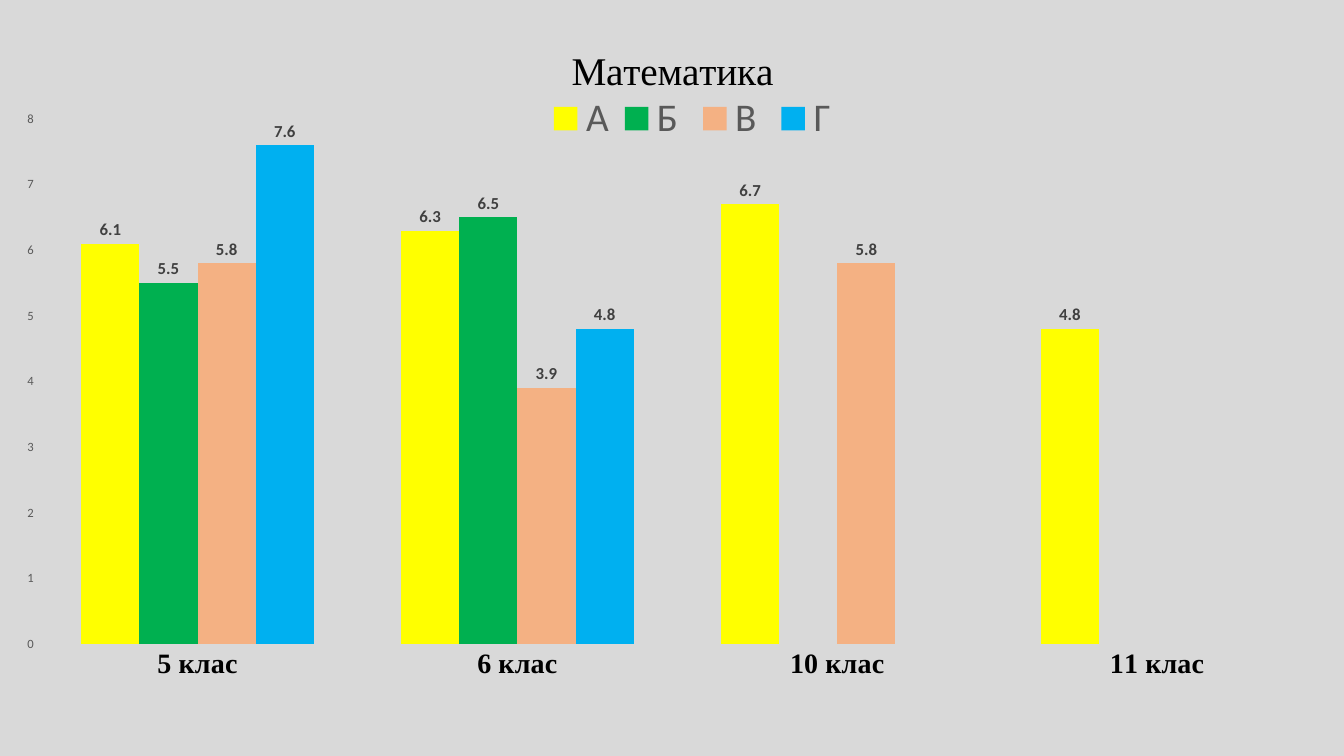
"""Build a slide with a clustered column chart of mathematics results by class."""
import lxml.etree
import pptx
import pptx.chart.data
import pptx.dml.color
import pptx.enum.chart
import pptx.oxml.ns
import pptx.util

Inches = pptx.util.Inches
qn = pptx.oxml.ns.qn
COLORS = {
    "background": "D9D9D9", "title": "000000", "axis": "595959", "label": "404040",
    "А": "FFFF00", "Б ": "00B050", "В ": "F4B183", "Г": "00B0F0",
}
CLASSES = ["5 клас", "6 клас", "10 клас", "11 клас"]
RESULTS = {
    "А": (6.1, 6.3, 6.7, 4.8),
    "Б ": (5.5, 6.5, None, None),
    "В ": (5.8, 3.9, 5.8, None),
    "Г": (7.6, 4.8, None, None),
}
FONTS = {
    "title": dict(name="Times New Roman", size=28, bold=False, color="title"),
    "category": dict(name="Times New Roman", size=20, bold=True, color="title"),
    "value": dict(name="Calibri", size=9, bold=False, color="axis"),
    "legend": dict(name="Calibri", size=28, bold=False, color="axis"),
    "label": dict(name="Calibri", size=12, bold=True, color="label"),
}


class SlideBuilder:
    """Holds the style and the current slide."""

    def __init__(self, slide, colors, fonts):
        self.slide, self.colors, self.fonts = slide, colors, fonts

    def rgb(self, name):
        """Return the named colour."""
        return pptx.dml.color.RGBColor.from_string(self.colors[name])

    def paint(self, fill, name):
        """Apply a solid named colour."""
        fill.solid()
        fill.fore_color.rgb = self.rgb(name)

    def style(self, font, name):
        """Apply the named text format."""
        for attr, value in self.fonts[name].items():
            if attr == "color":
                font.color.rgb = self.rgb(value)
            else:
                setattr(font, attr, pptx.util.Pt(value) if attr == "size" else value)

    def place(self, element, index, **values):
        """Give a chart part a manual layout in fractions of the chart."""
        for old in element.findall(qn("c:layout")):
            element.remove(old)
        layout = lxml.etree.Element(qn("c:layout"))
        manual = lxml.etree.SubElement(layout, qn("c:manualLayout"))
        modes = {"xMode": "edge", "yMode": "edge"}
        target = {"layoutTarget": values.pop("target")} if "target" in values else {}
        for tag, value in {**target, **modes, **values}.items():
            lxml.etree.SubElement(manual, qn("c:" + tag)).set("val", str(value))
        element.insert(index, layout)

    def axis(self, axis, font):
        """Format an axis with neither lines nor ticks."""
        axis.has_major_gridlines = False
        axis.major_tick_mark = pptx.enum.chart.XL_TICK_MARK.NONE
        axis.minor_tick_mark = pptx.enum.chart.XL_TICK_MARK.NONE
        axis.format.line.fill.background()
        self.style(axis.tick_labels.font, font)

    def title(self, chart, text):
        """Add the chart title."""
        chart.has_title = True
        p = chart.chart_title.text_frame.paragraphs[0]
        r = p.add_run()
        r.text = text
        self.style(r.font, "title")
        chart.chart_title.include_in_layout = False
        self.place(chart.chart_title._element, 1, x=0.42, y=0.04)

    def legend(self, chart):
        """Add the legend."""
        chart.has_legend = True
        legend = chart.legend
        legend.position = pptx.enum.chart.XL_LEGEND_POSITION.BOTTOM
        legend.include_in_layout = False
        self.style(legend.font, "legend")
        self.place(legend._element, 1, x=0.4, y=0.11, w=0.23, h=0.07)

    def column_chart(self, box, title, categories, results):
        """Add a clustered column chart."""
        data = pptx.chart.data.CategoryChartData(number_format="General")
        data.categories = categories
        for name, values in results.items():
            data.add_series(name, values)
        kind = pptx.enum.chart.XL_CHART_TYPE.COLUMN_CLUSTERED
        chart = self.slide.shapes.add_chart(kind, *map(Inches, box), data).chart
        chart.font.name = "Calibri"
        chart.font.size = pptx.util.Pt(10)
        self.title(chart, title)
        self.legend(chart)
        self.axis(chart.category_axis, "category")
        self.axis(chart.value_axis, "value")
        for attr, value in dict(minimum_scale=0, maximum_scale=8, major_unit=1).items():
            setattr(chart.value_axis, attr, value)
        plot = chart.plots[0]
        plot.gap_width, plot.overlap, plot.vary_by_categories = 150, 0, False
        for series in plot.series:
            self.paint(series.format.fill, series.name)
            series.invert_if_negative = False
            labels = series.data_labels
            labels.show_value = True
            labels.position = pptx.enum.chart.XL_LABEL_POSITION.OUTSIDE_END
            self.style(labels.font, "label")
        area = chart._chartSpace.find(".//" + qn("c:plotArea"))
        self.place(area, 0, target="inner", x=0.028, y=0.1455, w=0.952, h=0.6945)


def main():
    """Build and save the presentation."""
    prs = pptx.Presentation()
    prs.slide_width, prs.slide_height = Inches(13.33), Inches(7.5)
    s = SlideBuilder(prs.slides.add_slide(prs.slide_layouts[6]), COLORS, FONTS)
    s.paint(s.slide.background.fill, "background")
    s.column_chart((0, 0.09, 13.33, 7.5), "Математика", CLASSES, RESULTS)
    prs.save("out.pptx")


if __name__ == "__main__":
    main()
